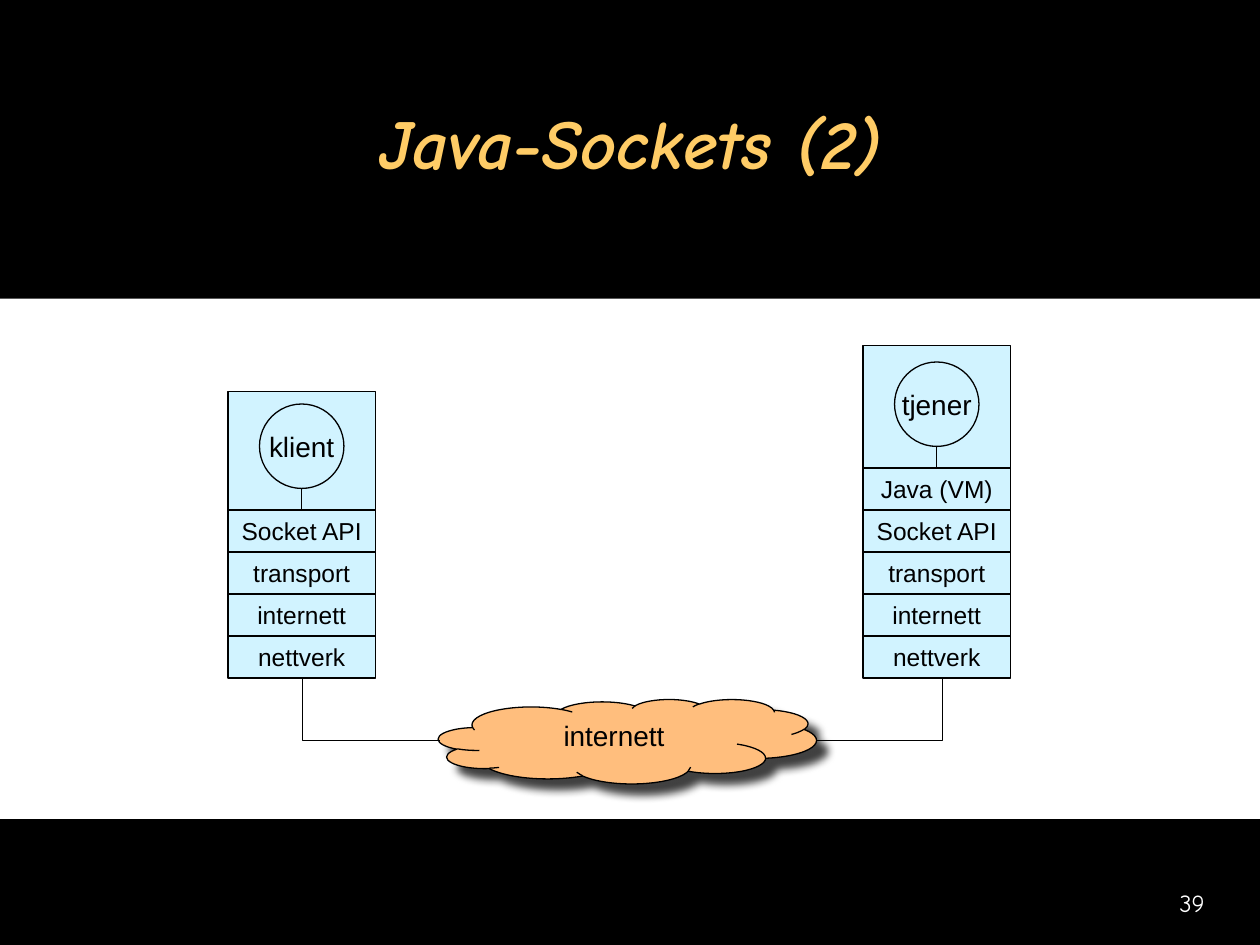
from lxml import etree
from pptx import Presentation
from pptx.dml.color import RGBColor
from pptx.enum.shapes import MSO_CONNECTOR as Link, MSO_SHAPE as Shape
from pptx.enum.text import MSO_ANCHOR as Anchor, PP_ALIGN as Align
from pptx.oxml import parse_xml
from pptx.oxml.ns import nsdecls, qn
from pptx.util import Inches, Pt

BLACK, WHITE, GOLD = "000000", "FFFFFF", "FFCC66"
PALE_BLUE, ORANGE = "D1F3FF", "FFBE7D"
LAYERS = ["Socket API", "transport", "internett", "nettverk"]
STACK_WIDTH, STACK_BOTTOM, LAYER_HEIGHT = 1.17, 5.38, 1 / 3
CIRCLE, STEM = 0.67, 0.17


def color(value):
    return RGBColor.from_string(value)


def write(shape, text, size, font="Arial", ink=BLACK, align=Align.CENTER,
          anchor=Anchor.MIDDLE, wrap=False):
    frame = shape.text_frame
    frame.word_wrap, frame.vertical_anchor = wrap, anchor
    para = frame.paragraphs[0]
    para.alignment = align
    span = para.add_run()
    span.text = text
    span.font.name, span.font.size = font, Pt(size)
    span.font.color.rgb = color(ink)
    return span


def add_box(page, kind, left, top, width, height, fill, line=BLACK):
    box = page.shapes.add_shape(kind, Inches(left), Inches(top),
                                Inches(width), Inches(height))
    box.shadow.inherit = False
    box.fill.solid()
    box.fill.fore_color.rgb = color(fill)
    if line:
        box.line.color.rgb = color(line)
        box.line.width = Pt(0.75)
    else:
        box.line.fill.background()
    return box


def add_link(page, kind, start, end):
    link = page.shapes.add_connector(kind, *map(Inches, start + end))
    link.line.color.rgb = color(BLACK)
    link.line.width = Pt(0.75)
    properties = link._element.spPr
    etree.SubElement(properties, qn("a:effectLst"))
    if kind == Link.ELBOW:  # a single corner
        properties.find(qn("a:prstGeom")).set("prst", "bentConnector2")


def add_title(page, text):
    title = page.shapes.title
    title.left, title.top = Inches(0.42), Inches(0.5)
    title.width, title.height = Inches(9.17), Inches(1.25)
    span = write(title, text, 40, "Comic Neue", GOLD, wrap=True)
    span.font.bold = span.font.italic = True


def add_page_number(page, number):
    box = page.shapes.add_textbox(Inches(7.58), Inches(7), Inches(2.08), Inches(0.33))
    write(box, number, 14, "Comic Neue", WHITE, Align.RIGHT, wrap=True)


def add_cloud(page, left, top, width, height, text):
    cloud = add_box(page, Shape.CLOUD, left, top, width, height, ORANGE)
    write(cloud, text, 16, anchor=Anchor.TOP, wrap=True)
    effects = cloud._element.spPr.find(qn("a:effectLst"))
    effects.append(parse_xml(
        f'<a:outerShdw {nsdecls("a")} blurRad="{Pt(5)}" dist="{Pt(8.5)}" dir="2700000"'
        ' algn="ctr" rotWithShape="0"><a:srgbClr val="000000">'
        '<a:alpha val="75000"/></a:srgbClr></a:outerShdw>'))


def add_stack(page, left, top, process, layers):
    """Draw a machine: a process circle standing on its protocol layers."""
    add_box(page, Shape.RECTANGLE, left, top, STACK_WIDTH, STACK_BOTTOM - top, PALE_BLUE)
    center = left + STACK_WIDTH / 2
    first = STACK_BOTTOM - len(layers) * LAYER_HEIGHT
    circle = add_box(page, Shape.OVAL, center - CIRCLE / 2, first - STEM - CIRCLE,
                     CIRCLE, CIRCLE, PALE_BLUE)
    write(circle, process, 16)
    add_link(page, Link.STRAIGHT, (center, first - STEM), (center, first))
    for row, name in enumerate(layers):
        layer = add_box(page, Shape.RECTANGLE, left, first + row * LAYER_HEIGHT,
                        STACK_WIDTH, LAYER_HEIGHT, PALE_BLUE)
        write(layer, name, 14)


def add_network(page, top, height):
    """Draw the white band with two machines joined through the cloud."""
    add_box(page, Shape.RECTANGLE, 0, top, 10, height, WHITE, line=None)
    add_cloud(page, 3.48, top + 3.18, 3, 0.67, "internett")
    cable = top + 3.51
    add_link(page, Link.ELBOW, (3.49, cable), (2.4, STACK_BOTTOM))
    add_link(page, Link.ELBOW, (6.48, cable), (7.48, STACK_BOTTOM))
    add_stack(page, 1.81, top + 0.74, "klient", LAYERS)
    add_stack(page, 6.85, top + 0.37, "tjener", ["Java (VM)"] + LAYERS)


def main():
    deck = Presentation()
    deck.slide_width, deck.slide_height = Inches(10), Inches(7.5)
    page = deck.slides.add_slide(deck.slide_layouts[5])
    page.background.fill.solid()
    page.background.fill.fore_color.rgb = color(BLACK)
    add_title(page, "Java-Sockets (2)")
    add_page_number(page, "39")
    add_network(page, 2.37, 4.13)
    deck.save("out.pptx")


if __name__ == "__main__":
    main()
